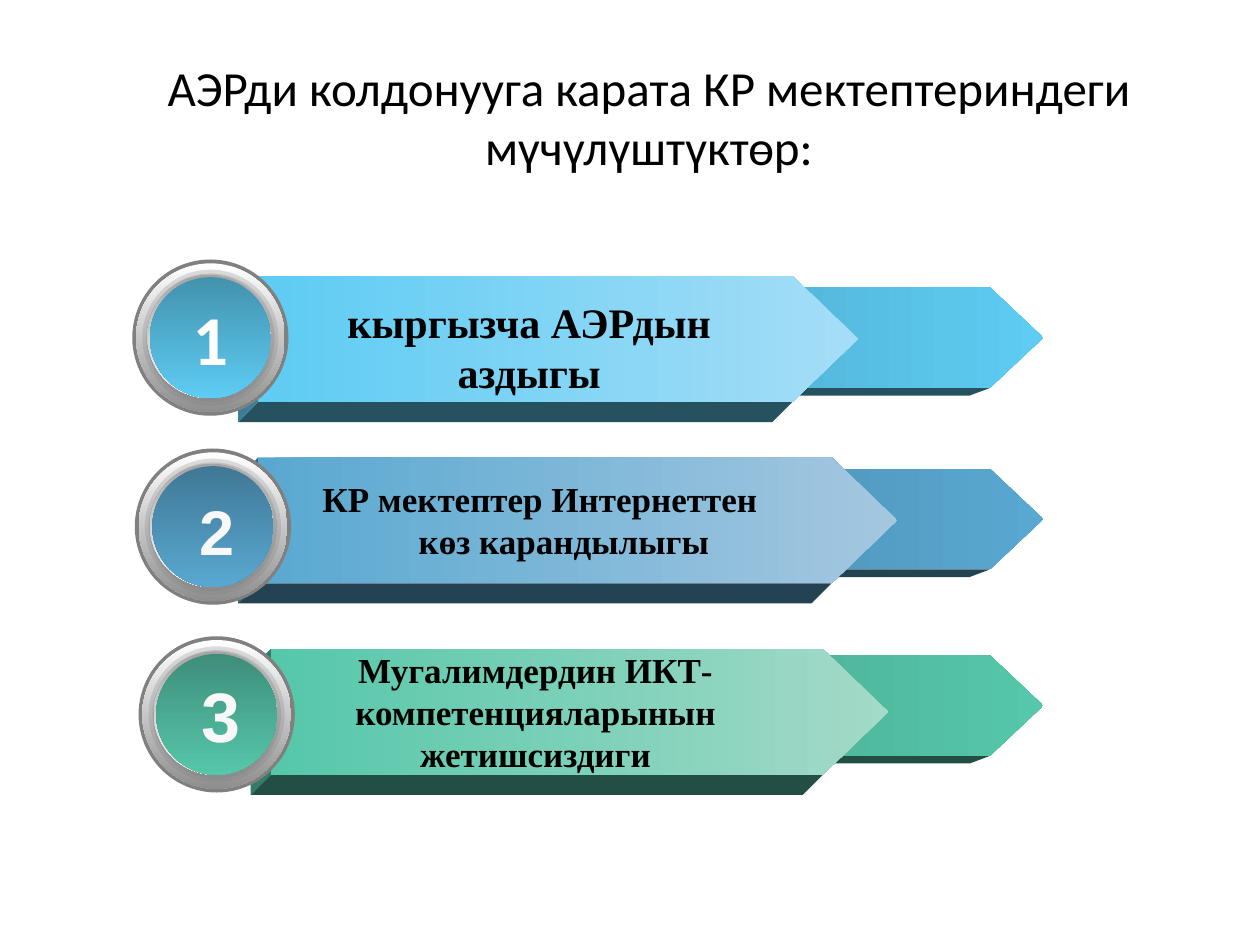
from dataclasses import dataclass
from typing import Optional

from lxml import etree
from pptx import Presentation
from pptx.dml.color import RGBColor
from pptx.enum.shapes import MSO_SHAPE
from pptx.enum.text import MSO_ANCHOR, MSO_AUTO_SIZE, PP_ALIGN
from pptx.oxml.ns import qn
from pptx.util import Inches, Pt

OVAL = MSO_SHAPE.OVAL
PLATE = MSO_SHAPE.PENTAGON
CHEVRON = MSO_SHAPE.CHEVRON
CENTER = PP_ALIGN.CENTER
MIDDLE = MSO_ANCHOR.MIDDLE
GROW = MSO_AUTO_SIZE.SHAPE_TO_FIT_TEXT
SERIF = "Times New Roman"

Box = tuple[float, float, float, float]


@dataclass
class Label:
    text: str
    size: int
    font: str
    color: str
    box: Optional[Box] = None
    hang: float = 0


@dataclass
class Row:
    plate: Box
    tail: float
    badge: tuple[float, float]
    base: str
    light: str
    shade: str
    dark: str
    side: str
    under: str
    number: Label
    label: Label


@dataclass
class Ring:
    inset: float
    size: float
    fill: tuple[str, ...]
    alpha: int = 100


RINGS = [
    Ring(0, 1.24, ("808080",)),
    Ring(0.03, 1.18, ("FFFFFF", "8F8F8F")),
    Ring(0.08, 1.08, ("808080",), 25),
    Ring(0.11, 1.02, ("808080",), 30),
    Ring(0.12, 0.98, ("A4A4A4", "FFFFFF")),
]

ROWS = [
    Row((2.05, 2.19, 4.76, 1), 2.28, (1.05, 2.06),
        "5ECCF3", "A5DDF7", "50AED0", "4392AE", "3A7E96", "26525F",
        Label("1", 40, "Calibri", "FFFFFF"),
        Label("кыргызча АЭРдын аздыгы", 24, SERIF, "000000",
              (2.39, 2.3, 3.62, 0.91))),
    Row((2.05, 3.63, 5.07, 1), 3.72, (1.07, 3.56),
        "59A8D1", "A4C7E0", "4C90B3", "407896", "376881", "234252",
        Label("2", 36, "Arial", "F8F8F8", (1.38, 3.86, 0.68, 0.71)),
        Label("КР мектептер Интернеттен көз карандылыгы", 20, SERIF,
              "000000", (2.44, 3.74, 3.69, 0.77), 0.38)),
    Row((2.15, 5.15, 4.9, 1), 5.2, (1.1, 5.05),
        "56C7AA", "A3DAC8", "4AAA91", "3E8E7A", "357B69", "224E43",
        Label("3", 40, "Arial", "F8F8F8", (1.35, 5.29, 0.8, 0.77)),
        Label("Мугалимдердин ИКТ-компетенцияларынын жетишсиздиги", 20,
              SERIF, "000000", (2.49, 5.1, 3.52, 1.11))),
]


def rgb(code: str) -> RGBColor:
    return RGBColor.from_string(code)


def paint(shape, colors: tuple[str, ...], angle: int = 0, alpha: int = 100):
    """Fill with one colour or a two-stop gradient, without line or shadow."""
    shape.shadow.inherit = False
    shape.line.fill.background()
    fill = shape.fill
    if len(colors) == 1:
        fill.solid()
        fill.fore_color.rgb = rgb(colors[0])
        if alpha < 100:
            node = shape.fill._xPr.find(qn("a:solidFill"))[0]
            etree.SubElement(node, qn("a:alpha"), val=str(alpha * 1000))
    else:
        fill.gradient()
        fill.gradient_angle = angle
        for stop, color in zip(fill.gradient_stops, colors):
            stop.color.rgb = rgb(color)


def draw(shapes, kind, box: Box, colors: tuple[str, ...],
         angle: int = 0, alpha: int = 100):
    shape = shapes.add_shape(kind, *map(Inches, box))
    paint(shape, colors, angle, alpha)
    return shape


def face(shapes, points: list[tuple[float, float]], color: str) -> None:
    first, *rest = [(Inches(x), Inches(y)) for x, y in points]
    pen = shapes.build_freeform(*first)
    pen.add_line_segments(rest)
    paint(pen.convert_to_shape(), (color,))


def arrow(shapes, kind, box: Box, adj: float, colors: tuple[str, str],
          row: Row, drop: float) -> None:
    """Draw an arrow with its depth towards the lower left."""
    left, top, width, height = box
    depth = 0.16
    base = top + height
    neck = left + width - adj * height
    face(shapes, [(left, base), (neck, base), (neck - depth, base + drop),
                  (left - depth, base + drop)], row.under)
    if kind == PLATE:
        face(shapes, [(left, top), (left, base), (left - depth, base + drop),
                      (left - depth, top + drop)], row.side)
    draw(shapes, kind, box, colors).adjustments[0] = adj


def write(frame, label: Label) -> None:
    frame.text = label.text
    para = frame.paragraphs[0]
    para.alignment = CENTER
    if label.hang:
        props = para._p.get_or_add_pPr()
        props.set("marL", str(Inches(label.hang)))
        props.set("indent", str(-Inches(label.hang)))
    font = para.font
    font.size, font.name, font.bold = Pt(label.size), label.font, True
    font.color.rgb = rgb(label.color)


def note(shapes, label: Label) -> None:
    frame = shapes.add_textbox(*map(Inches, label.box)).text_frame
    frame.word_wrap = True
    frame.auto_size = GROW
    write(frame, label)


def badge(shapes, row: Row) -> None:
    left, top = row.badge
    group = shapes.add_group_shape().shapes
    disc = Ring(0.14, 0.96, (row.dark, row.base))
    for ring in RINGS + [disc]:
        box = (left + ring.inset, top + ring.inset, ring.size, ring.size)
        oval = draw(group, OVAL, box, ring.fill, 270, ring.alpha)
    if row.number.box:
        note(shapes, row.number)
    else:
        frame = oval.text_frame
        frame.word_wrap = False
        frame.vertical_anchor = MIDDLE
        write(frame, row.number)


def main() -> None:
    deck = Presentation()
    deck.slide_width, deck.slide_height = Inches(10), Inches(7.5)
    slide = deck.slides.add_slide(deck.slide_layouts[5])
    shapes = slide.shapes

    title = shapes.title
    title.left, title.top = Inches(0.5), Inches(0.3)
    title.width, title.height = Inches(9.3), Inches(1.25)
    frame = title.text_frame
    frame.text = "АЭРди колдонууга карата КР мектептериндеги мүчүлүштүктөр:"
    frame.vertical_anchor = MIDDLE
    para = frame.paragraphs[0]
    para.alignment = CENTER
    para.font.size, para.font.name = Pt(28), "Calibri"
    para.font.color.rgb = rgb("000000")

    for row in ROWS:
        arrow(shapes, CHEVRON, (5.31, row.tail, 2.97, 0.8), 0.53,
              (row.shade, row.base), row, 0.06)
        arrow(shapes, PLATE, row.plate, 0.52, (row.base, row.light), row, 0.16)
        badge(shapes, row)
        note(shapes, row.label)
    deck.save("out.pptx")


if __name__ == "__main__":
    main()
